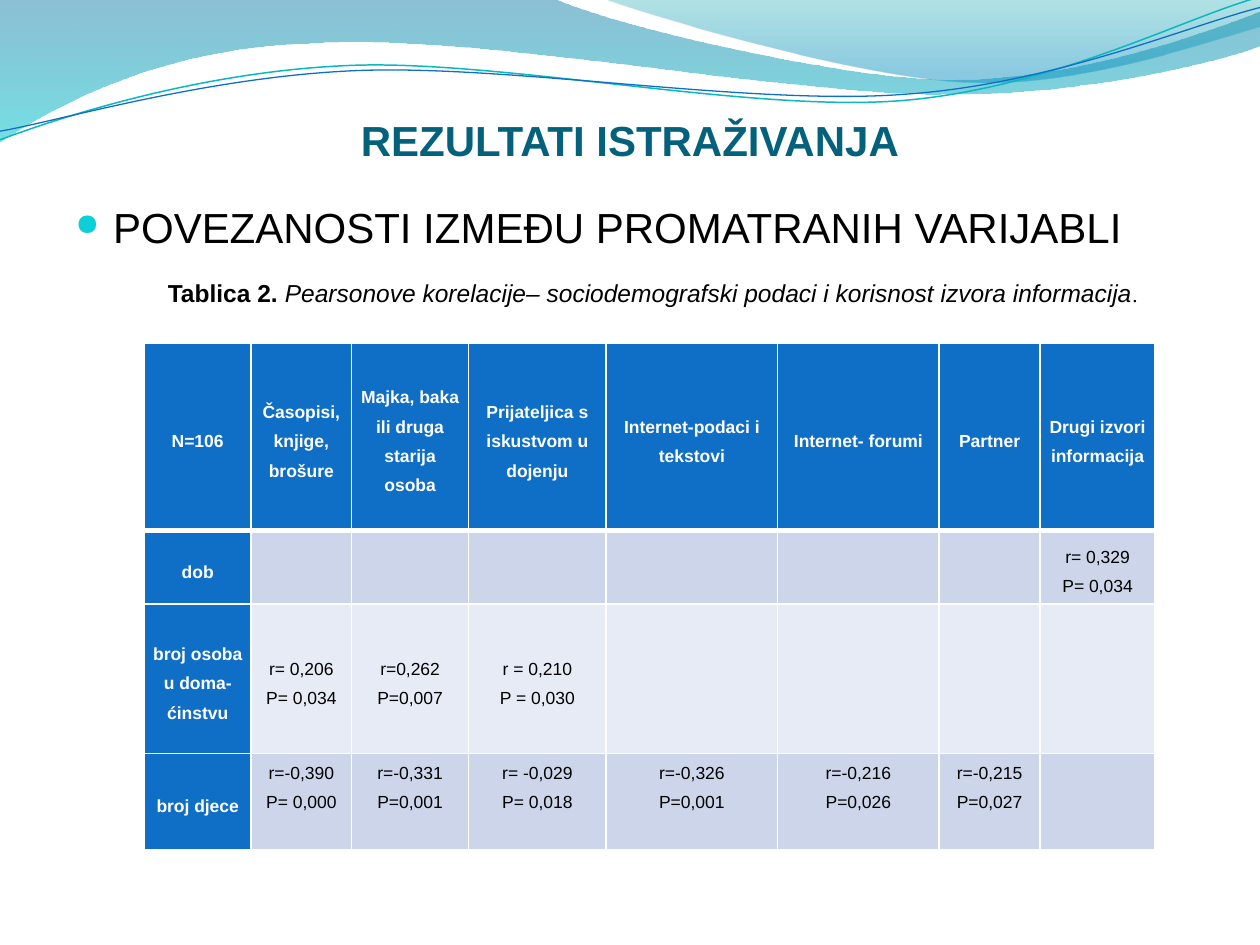
import pptx
import pptx.dml.color
import pptx.enum.text
import pptx.oxml
import pptx.oxml.ns
import pptx.util
from lxml import etree

Pt = pptx.util.Pt
Align = pptx.enum.text.PP_ALIGN
Anchor = pptx.enum.text.MSO_ANCHOR
qn = pptx.oxml.ns.qn

BLUE, TEAL, WHITE, BLACK = "0F6FC6", "0AB8BF", "FFFFFF", "000000"
BANDS = ["CCD5EA", "E7EBF5"]

# Outlines: a single point is a straight line to it, three points are a cubic curve.
LONG_WAVE = [
    [(0, 0)], [(316.8, -0.7)],
    [(342.7, 12.2), (478.1, 45.4), (545.8, 45.4)],
    [(614.2, 45.4), (689.8, 18.7), (720, 6.5)],
    [(720.7, 25.9)],
    [(707.8, 31.7), (626.4, 54.7), (537.1, 54)],
    [(447.8, 54), (275, 20.2), (185, 24.5)],
    [(92.9, 25.9), (33.1, 59.8), (-0.7, 81.4)],
]
RIGHT_WAVE = [
    [(344.9, -0.7)],
    [(366.5, 7.9), (491, 44.6), (553.7, 46.8)],
    [(616.3, 49.7), (691.9, 23), (720, 15.1)],
    [(720, 0)],
]
TEAL_STRAND = [
    [(-1.4, 62.9)],
    [(33.7, 51.7), (114, 29.4), (199.8, 29.9)],
    [(284.8, 30.3), (425.8, 67.2), (512.4, 64.9)],
    [(599, 62.4), (676.4, 25.7), (720.2, 15.6)],
]
BLUE_STRAND = [
    [(-1.2, 58)],
    [(32.9, 53.8), (118.3, 32.5), (204, 33)],
    [(290.5, 33.5), (428.9, 63.8), (515.5, 61.3)],
    [(601.3, 59.6), (678.5, 30.1), (721.4, 21.3)],
]
STRAND_TILT = 357.3

COLUMN_WIDTHS = [61.1, 57.4, 66.9, 78.6, 98, 92.3, 57.7, 65.7]
ROW_HEIGHTS = [107, 42, 85.5, 54.8]
CORRELATIONS = [
    ["N=106", "Časopisi, knjige, brošure", "Majka, baka ili druga starija osoba",
     "Prijateljica s iskustvom u dojenju", "Internet-podaci i tekstovi",
     "Internet- forumi", "Partner", "Drugi izvori informacija"],
    ["dob", "", "", "", "", "", "", "r= 0,329\nP= 0,034"],
    ["broj osoba u doma-\nćinstvu", "r= 0,206\nP= 0,034", "r=0,262\nP=0,007",
     "r = 0,210\nP = 0,030", "", "", "", ""],
    ["broj djece", "r=-0,390\nP= 0,000", "r=-0,331\nP=0,001", "r= -0,029\nP= 0,018",
     "r=-0,326\nP=0,001", "r=-0,216\nP=0,026", "r=-0,215\nP=0,027", ""],
]


def rgb(hex_color):
    return pptx.dml.color.RGBColor.from_string(hex_color)


class Deck:
    """Holds the text style and the current slide."""

    font = "Arial"

    def __init__(self, width, height):
        self.presentation = pptx.Presentation()
        self.presentation.slide_width = Pt(width)
        self.presentation.slide_height = Pt(height)
        self.slide = self.presentation.slides.add_slide(self.presentation.slide_layouts[6])

    def format(self, run, size, color=BLACK, bold=False, italic=False, font=None):
        run.font.name = font or self.font
        run.font.size = Pt(size)
        run.font.bold = bold
        run.font.italic = italic
        run.font.color.rgb = rgb(color)

    def outline(self, segments, closed):
        """Build a freeform through all points, then join each group of three into a curve."""
        points = [(Pt(x), Pt(y)) for segment in segments for x, y in segment]
        builder = self.slide.shapes.build_freeform(*points[0], scale=1.0)
        builder.add_line_segments(points[1:], close=closed)
        shape = builder.convert_to_shape()
        shape.shadow.inherit = False
        lines = iter(list(shape._element.spPr.iter(qn("a:lnTo"))))
        for segment in segments[1:]:
            group = [next(lines) for _ in segment]
            if len(group) == 3:
                curve = etree.Element(qn("a:cubicBezTo"))
                group[0].addprevious(curve)
                for line in group:
                    curve.append(line[0])
                    line.getparent().remove(line)
        return shape

    def wave(self, segments, stops):
        """Draw a filled wave; each stop is position, colour and opacity in percent."""
        wave = self.outline(segments, True)
        wave.line.fill.background()
        wave.fill.gradient()
        wave.fill.gradient_angle = 270
        for stop, (position, color, _) in zip(wave.fill.gradient_stops, stops):
            stop.position = position
            stop.color.rgb = rgb(color)
        tints = wave._element.spPr.iter(qn("a:srgbClr"))
        for tint, (_, _, opacity) in zip(tints, stops):
            etree.SubElement(tint, qn("a:alpha"), val=str(opacity * 1000))

    def strand(self, segments, color, width):
        strand = self.outline(segments, False)
        strand.rotation = STRAND_TILT
        strand.fill.background()
        strand.line.color.rgb = rgb(color)
        strand.line.width = Pt(width)

    def text(self, box, pieces, align=Align.LEFT, anchor=Anchor.TOP, wrap=True):
        """Add one paragraph of (text, style) pieces and return its text frame."""
        frame = self.slide.shapes.add_textbox(*map(Pt, box)).text_frame
        frame.word_wrap = wrap
        frame.vertical_anchor = anchor
        paragraph = frame.paragraphs[0]
        paragraph.alignment = align
        for words, style in pieces:
            run = paragraph.add_run()
            run.text = words
            self.format(run, **style)
        return frame

    def indent(self, paragraph, margin, first_line):
        properties = paragraph._p.get_or_add_pPr()
        properties.set("marL", str(Pt(margin)))
        properties.set("indent", str(Pt(first_line)))

    def bullet(self, paragraph, color, percent):
        properties = paragraph._p.get_or_add_pPr()
        tint = etree.SubElement(properties, qn("a:buClr"))
        etree.SubElement(tint, qn("a:srgbClr"), val=color)
        etree.SubElement(properties, qn("a:buSzPct"), val=str(percent * 1000))
        etree.SubElement(properties, qn("a:buChar"), char="●")

    def border(self, cell, side, width):
        line = pptx.oxml.parse_xml(
            f'<a:{side} {pptx.oxml.ns.nsdecls("a")} w="{Pt(width)}"><a:solidFill>'
            f'<a:srgbClr val="{WHITE}"/></a:solidFill></a:{side}>')
        cell._tc.get_or_add_tcPr().append(line)

    def cell(self, cell, words, row, column):
        heading = row == 0 or column == 0
        for side in ("lnL", "lnR", "lnT", "lnB"):
            thick = (row, side) in ((0, "lnB"), (1, "lnT"))
            self.border(cell, side, 3 if thick else 1)
        cell.fill.solid()
        cell.fill.fore_color.rgb = rgb(BLUE if heading else BANDS[(row - 1) % 2])
        cell.margin_left = cell.margin_right = Pt(5)
        cell.margin_top = cell.margin_bottom = 0
        cell.vertical_anchor = Anchor.TOP if row == 3 and not heading else Anchor.MIDDLE
        cell.text_frame.text = words
        for paragraph in cell.text_frame.paragraphs:
            paragraph.alignment = Align.CENTER
            paragraph.line_spacing = 1.5
            for run in paragraph.runs:
                self.format(run, 10, WHITE if heading else BLACK, bold=heading)

    def table(self, left, top, widths, heights, rows):
        table = self.slide.shapes.add_table(
            len(rows), len(widths), Pt(left), Pt(top),
            Pt(sum(widths)), Pt(sum(heights))).table
        for column, width in zip(table.columns, widths):
            column.width = Pt(width)
        for r, (height, texts) in enumerate(zip(heights, rows)):
            table.rows[r].height = Pt(height)
            for c, words in enumerate(texts):
                self.cell(table.cell(r, c), words, r, c)


def main():
    deck = Deck(720, 540)
    deck.wave(LONG_WAVE, [(0, "0074A1", 45), (1, "00C6CF", 55)])
    deck.wave(RIGHT_WAVE, [(0, "00A1A9", 30), (0.8, "008BBF", 45)])
    deck.strand(TEAL_STRAND, TEAL, 0.85)
    deck.strand(BLUE_STRAND, BLUE, 0.75)

    title = deck.text((36, 55.4, 648, 39),
                      [("REZULTATI ISTRAŽIVANJA", dict(size=24, color="04617B", bold=True))],
                      Align.CENTER, Anchor.BOTTOM)
    title.margin_left = title.margin_right = title.margin_bottom = 0
    topic = deck.text((36, 111.6, 648, 386.6),
                      [("POVEZANOSTI IZMEĐU PROMATRANIH VARIJABLI", dict(size=24))]).paragraphs[0]
    topic.space_before = Pt(1.5)
    deck.indent(topic, 21.6, -21.6)
    deck.bullet(topic, "0BD0D9", 72)

    deck.table(82.4, 196.2, COLUMN_WIDTHS, ROW_HEIGHTS, CORRELATIONS)
    caption = deck.text(
        (70.8, 155.5, 589, 46),
        [("Tablica 2. ", dict(size=14, bold=True)),
         ("Pearsonove korelacije– sociodemografski podaci i korisnost izvora informacija",
          dict(size=14, italic=True)),
         (".", dict(size=12, italic=True, font="Times New Roman"))],
        wrap=False)
    deck.indent(caption.paragraphs[0], 0, 18)
    deck.presentation.save("out.pptx")


if __name__ == "__main__":
    main()
